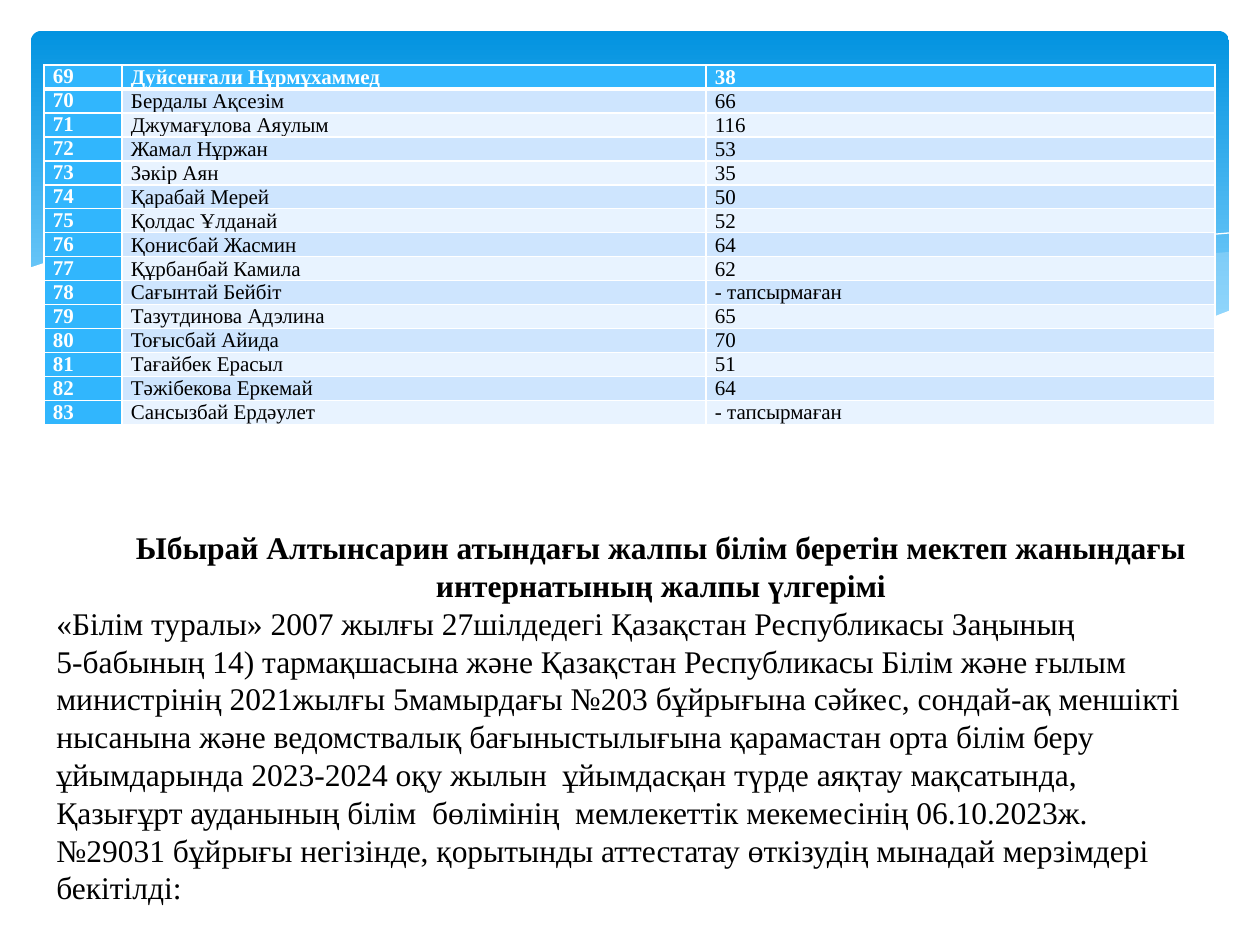
from lxml import etree
from pptx import Presentation
from pptx.dml.color import RGBColor
from pptx.enum.shapes import MSO_SHAPE
from pptx.enum.text import MSO_ANCHOR, PP_ALIGN
from pptx.oxml.ns import qn
from pptx.util import Pt

ROUND = MSO_SHAPE.ROUNDED_RECTANGLE
TOP, LOW = MSO_ANCHOR.TOP, MSO_ANCHOR.BOTTOM
LEFT, MID = PP_ALIGN.LEFT, PP_ALIGN.CENTER
SCALE = 914400 / 126  # EMU in one px

HUES = {
    "white": "FFFFFF", "ink": "000000", "key": "31B6FD",
    "band": "CEE5FE", "pale": "E8F3FF",
    "deep": "0293E0", "sky": "83D3FE", "mist": "C6E7FC",
}


def px(num):
    return round(num * SCALE)


def hue(name):
    return RGBColor.from_string(HUES[name])


class Deck:
    def __init__(self, wide, high):
        self.prs = Presentation()
        self.prs.slide_width, self.prs.slide_height = px(wide), px(high)
        self.slide = self.prs.slides.add_slide(self.prs.slide_layouts[6])
        self.shapes = self.slide.shapes
        self.face = "Times New Roman"

    def label(self, para, text, size, color="ink", bold=False):
        run = para.add_run()
        run.text = text
        form = {"name": self.face, "size": Pt(size), "bold": bold}
        for key, val in form.items():
            setattr(run.font, key, val)
        run.font.color.rgb = hue(color)

    def panel(self, box, curve, stops):
        item = self.shapes.add_shape(ROUND, *map(px, box))
        item.shadow.inherit = False
        item.adjustments[0] = curve
        item.line.fill.background()
        item.fill.gradient()
        item.fill.gradient_angle = 270
        for stop, (name, spot) in zip(item.fill.gradient_stops, stops):
            stop.color.rgb, stop.position = hue(name), spot

    def wave(self, pts, fill=None, alpha=100):
        """A filled outline, or an open white hairline without a fill."""
        pen = self.shapes.build_freeform(*pts[0], scale=SCALE)
        pen.add_line_segments(pts[1:], close=fill is not None)
        item = pen.convert_to_shape()
        item.shadow.inherit = False
        if fill is None:
            item.fill.background()
            item.line.color.rgb, item.line.width = hue("white"), 0
            return
        item.line.fill.background()
        item.fill.solid()
        item.fill.fore_color.rgb = hue(fill)
        if alpha < 100:
            tone = item._element.spPr.find(".//" + qn("a:srgbClr"))
            etree.SubElement(tone, qn("a:alpha"), val=str(alpha * 1000))

    def edges(self, cell, low):
        props = cell._tc.get_or_add_tcPr()
        sides = (("lnL", 1), ("lnR", 1), ("lnT", 1), ("lnB", low))
        for spot, (side, width) in enumerate(sides):
            line = etree.Element(qn("a:" + side), w=str(int(Pt(width))))
            fill = etree.SubElement(line, qn("a:solidFill"))
            etree.SubElement(fill, qn("a:srgbClr"), val=HUES["white"])
            props.insert(spot, line)

    def table(self, left, top, cols, high, rows):
        box = (left, top, sum(cols), high * len(rows))
        grid = self.shapes.add_table(len(rows), len(cols), *map(px, box)).table
        for col, wide in zip(grid.columns, cols):
            col.width = px(wide)
        for r, row in enumerate(rows):
            grid.rows[r].height = px(high)
            for c, text in enumerate(row):
                cell = grid.cell(r, c)
                head = r == 0 or c == 0
                form = {
                    "margin_left": px(9), "margin_right": px(9),
                    "margin_top": 0, "margin_bottom": 0,
                    "vertical_anchor": LOW if c else TOP,
                }
                for key, val in form.items():
                    setattr(cell, key, val)
                cell.fill.solid()
                shade = "key" if head else "band" if r % 2 else "pale"
                cell.fill.fore_color.rgb = hue(shade)
                self.edges(cell, 1 if r else 3)
                self.label(cell.text_frame.paragraphs[0], text, 12,
                           "white" if head else "ink", head)

    def text(self, box, title, body, size):
        frame = self.shapes.add_textbox(*map(px, box)).text_frame
        frame.word_wrap = True
        head = frame.paragraphs[0]
        head.alignment, head.level = MID, 1
        props = head._p.get_or_add_pPr()
        props.set("marL", str(px(63)))
        props.set("indent", "0")
        self.label(head, title, size, bold=True)
        para = frame.add_paragraph()
        para.alignment = LEFT
        for n, part in enumerate(body):
            if n:
                para.add_line_break()
            self.label(para, part, size)


NAMES = [
    ("Дуйсенғали Нұрмұхаммед", "38"), ("Бердалы Ақсезім", "66"),
    ("Джумағұлова Аяулым", "116"), ("Жамал Нұржан", "53"),
    ("Зәкір Аян", "35"), ("Қарабай Мерей", "50"),
    ("Қолдас Ұлданай", "52"), ("Қонисбай Жасмин", "64"),
    ("Құрбанбай Камила", "62"), ("Сағынтай Бейбіт", "- тапсырмаған"),
    ("Тазутдинова Адэлина", "65"), ("Тоғысбай Айида", "70"),
    ("Тағайбек Ерасыл", "51"), ("Тәжібекова Еркемай", "64"),
    ("Сансызбай Ердәулет", "- тапсырмаған"),
]
TITLE = ("Ыбырай Алтынсарин атындағы жалпы білім беретін мектеп жанындағы "
         "интернатының жалпы үлгерімі")
BODY = [
    "«Білім туралы» 2007 жылғы 27шілдедегі Қазақстан Республикасы Заңының",
    "5-бабының 14) тармақшасына және Қазақстан Республикасы Білім және ғылым "
    "министрінің 2021жылғы 5мамырдағы №203 бұйрығына сәйкес, сондай-ақ "
    "меншікті нысанына және ведомствалық бағыныстылығына қарамастан орта "
    "білім беру ұйымдарында 2023-2024 оқу жылын  ұйымдасқан түрде аяқтау "
    "мақсатында, Қазығұрт ауданының білім  бөлімінің  мемлекеттік мекемесінің "
    "06.10.2023ж. №29031 бұйрығы негізінде, қорытынды аттестатау өткізудің "
    "мынадай мерзімдері бекітілді:",
]

# Wave outlines, in px
RIGHT = [(1229, 252), (1194, 255), (1142, 265), (1085, 277), (1014, 299),
         (949, 312), (889, 324), (833, 334), (871, 339), (922, 345),
         (984, 349), (1038, 350), (1088, 348), (1131, 343), (1169, 335),
         (1196, 324), (1229, 311)]
SWELL = [(1125, 344), (1055, 334), (977, 320), (890, 302), (793, 280),
         (736, 266), (682, 255), (632, 247), (557, 238), (503, 234),
         (455, 233), (413, 236), (360, 241), (431, 251), (509, 266),
         (566, 280), (668, 302), (757, 321), (838, 335), (910, 345),
         (974, 349), (1043, 350), (1104, 347)]
FALL = [(389, 246), (433, 239), (487, 236), (545, 236), (616, 239),
        (701, 248), (801, 262), (916, 284), (1047, 316), (1143, 343)]
RISE = [(772, 324), (847, 304), (942, 281), (1053, 257), (1128, 244),
        (1182, 237), (1229, 233)]
FRONT = [(1231, 310), (1197, 323), (1159, 334), (1118, 342), (1071, 347),
         (1019, 349), (959, 346), (892, 340), (816, 330), (730, 315),
         (634, 293), (563, 277), (492, 261), (428, 248), (368, 239),
         (315, 234), (266, 232), (223, 232), (184, 233), (150, 236),
         (120, 241), (96, 246), (74, 253), (50, 261), (29, 268),
         (29, 415), (1231, 415)]


def main():
    deck = Deck(1260, 945)

    # Blue band with waves
    deck.panel((31, 31, 1198, 340), 0.03, [("deep", 0), ("sky", 0.9)])
    deck.wave(RIGHT, "mist", 29)
    deck.wave(SWELL, "mist", 40)
    deck.wave(FALL)
    deck.wave(RISE)
    deck.wave(FRONT, "white")

    # Results, numbered from 69
    rows = [(str(n), *row) for n, row in enumerate(NAMES, 69)]
    deck.table(44, 65, (78, 584, 509), 24, rows)

    # Heading and order text
    deck.text((44, 522, 1171, 394), TITLE, BODY, 18)

    deck.prs.save("out.pptx")


if __name__ == "__main__":
    main()
